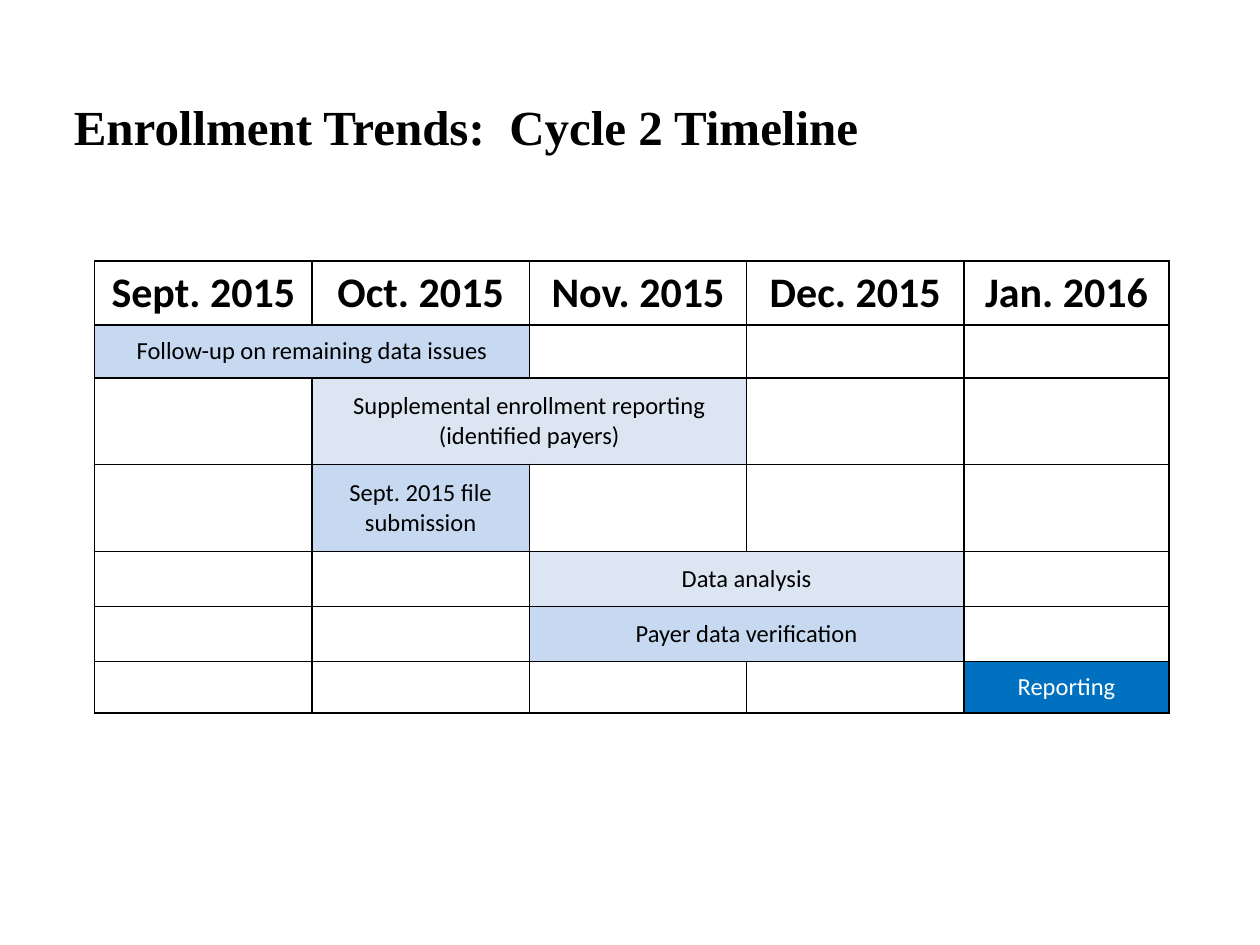
from lxml import etree
from pptx import Presentation
from pptx.dml.color import RGBColor
from pptx.enum.text import MSO_ANCHOR, PP_ALIGN
from pptx.oxml.ns import qn
from pptx.util import Cm, Pt

MIDDLE = MSO_ANCHOR.MIDDLE
LEFT, CENTER = PP_ALIGN.LEFT, PP_ALIGN.CENTER

BLACK = RGBColor(0x00, 0x00, 0x00)
WHITE = RGBColor(0xFF, 0xFF, 0xFF)
BLUE = RGBColor(0xC6, 0xD9, 0xF1)
PALE_BLUE = RGBColor(0xDC, 0xE6, 0xF2)
STRONG_BLUE = RGBColor(0x00, 0x70, 0xC0)

TITLE_FORMAT = {"name": "Times New Roman", "size": Pt(28), "bold": True}
MONTH_FORMAT = {"name": "Calibri", "size": Pt(24), "bold": True}
TASK_FORMAT = {"name": "Calibri", "size": Pt(14), "bold": False}


def write(frame, text, format_values, color, alignment):
    para = frame.paragraphs[0]
    para.alignment = alignment
    span = para.add_run()
    span.text = text
    for name, value in format_values.items():
        setattr(span.font, name, value)
    span.font.color.rgb = color


def add_borders(cell):
    properties = cell._tc.get_or_add_tcPr()
    for side in ("a:lnL", "a:lnR", "a:lnT", "a:lnB"):
        line = etree.SubElement(properties, qn(side), w=str(Pt(1)))
        fill = etree.SubElement(line, qn("a:solidFill"))
        etree.SubElement(fill, qn("a:srgbClr"), val=str(BLACK))


deck = Presentation()
deck.slide_width, deck.slide_height = Cm(25.4), Cm(19.05)
page = deck.slides.add_slide(deck.slide_layouts[6])

# Timeline grid
months = ["Sept. 2015", "Oct. 2015", "Nov. 2015", "Dec. 2015", "Jan. 2016"]
column_widths = [4.38] * 4 + [4.14]
row_heights = [1.27, 1.07, 1.75, 1.75, 1.11, 1.11, 1.04]
table = page.shapes.add_table(
    len(row_heights), len(months), Cm(1.91), Cm(5.26),
    Cm(sum(column_widths)), Cm(sum(row_heights))).table
table.first_row = table.horz_banding = False
for column, width in zip(table.columns, column_widths):
    column.width = Cm(width)
for row, height in zip(table.rows, row_heights):
    row.height = Cm(height)
for cell in table.iter_cells():
    cell.vertical_anchor = MIDDLE
    add_borders(cell)
    cell.fill.background()

# Month headings
for index, month in enumerate(months):
    write(table.cell(0, index).text_frame, month, MONTH_FORMAT, BLACK, CENTER)

# Tasks, one a row: text, first month, last month, fill, text colour
tasks = [
    ("Follow-up on remaining data issues", 0, 1, BLUE, BLACK),
    ("Supplemental enrollment reporting (identified payers)", 1, 2, PALE_BLUE, BLACK),
    ("Sept. 2015 file submission", 1, 1, BLUE, BLACK),
    ("Data analysis", 2, 3, PALE_BLUE, BLACK),
    ("Payer data verification", 2, 3, BLUE, BLACK),
    ("Reporting", 4, 4, STRONG_BLUE, WHITE),
]
for row, (text, first, last, fill_color, text_color) in enumerate(tasks, start=1):
    cell = table.cell(row, first)
    if last > first:
        cell.merge(table.cell(row, last))
    cell.fill.solid()
    cell.fill.fore_color.rgb = fill_color
    write(cell.text_frame, text, TASK_FORMAT, text_color, CENTER)

# Title
box = page.shapes.add_textbox(Cm(1.24), Cm(1.65), Cm(22.33), Cm(1.78))
box.text_frame.word_wrap = True
box.text_frame.vertical_anchor = MIDDLE
write(box.text_frame, "Enrollment Trends:  Cycle 2 Timeline", TITLE_FORMAT, BLACK, LEFT)

deck.save("out.pptx")
